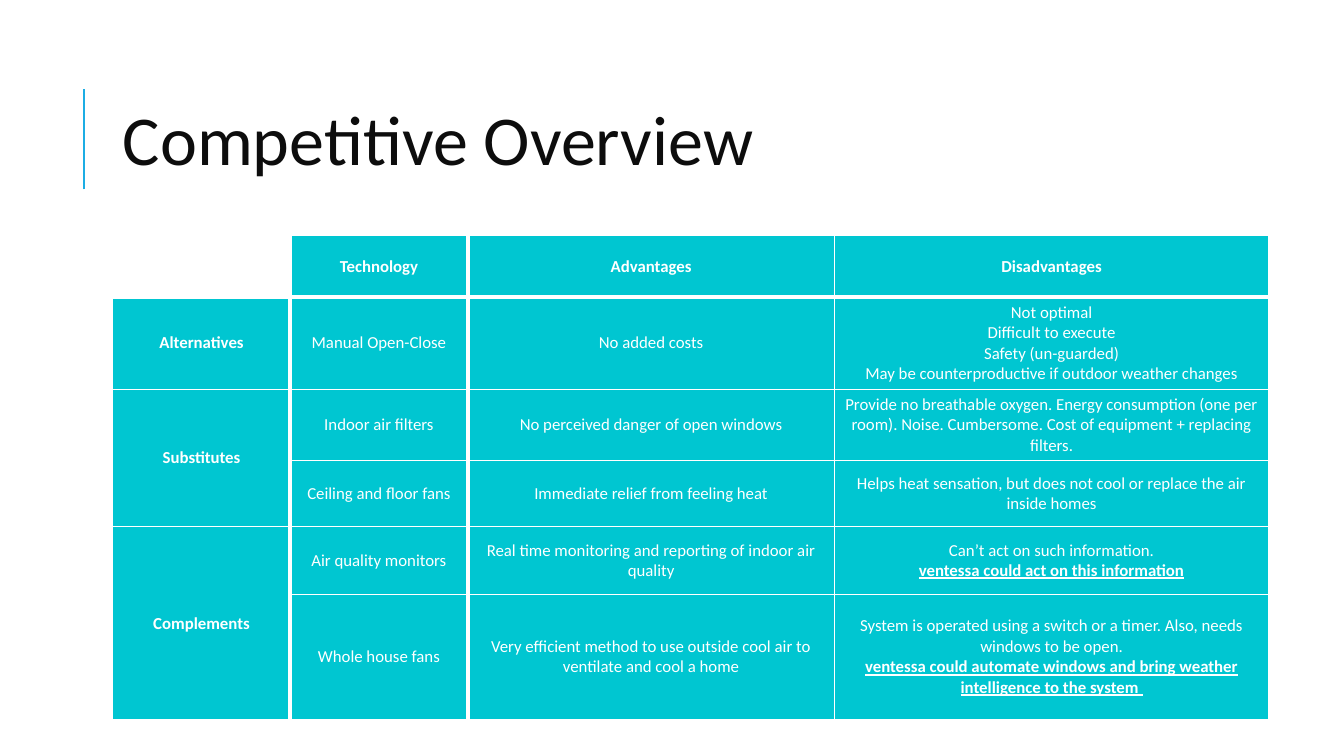
"""Build the competitive overview slide."""
from dataclasses import dataclass

from lxml import etree
from pptx import Presentation
from pptx.dml.color import RGBColor
from pptx.enum.shapes import MSO_CONNECTOR
from pptx.enum.text import MSO_ANCHOR, PP_ALIGN
from pptx.oxml.ns import qn
from pptx.util import Emu, Inches, Pt

STRAIGHT = MSO_CONNECTOR.STRAIGHT
MIDDLE = MSO_ANCHOR.MIDDLE
LEFT, CENTER = PP_ALIGN.LEFT, PP_ALIGN.CENTER

COLORS = {"cell": "00C6D1", "white": "FFFFFF", "title": "0D0D0D", "rule": "1CADE4"}
FONT = "Calibri"
W, H = Inches(13.33), Inches(7.5)
COL_SHARES = [13.2, 13.2, 27.3, 32.3]
ROW_SHARES = [8.1, 12.2, 9.4, 8.8, 8.9, 16.6]
HEADERS = ["", "Technology", "Advantages", "Disadvantages"]
THIN, THICK = 1, 3


@dataclass
class Option:
    """One technology with its group, pros, cons and closing remark."""
    group: str
    technology: str
    advantage: str
    drawbacks: list[str]
    remark: str = ""


OPTIONS = [
    Option("Alternatives", "Manual Open-Close", "No added costs",
           ["Not optimal", "Difficult to execute", "Safety (un-guarded)",
            "May be counterproductive if outdoor weather changes"]),
    Option("Substitutes", "Indoor air filters", "No perceived danger of open windows",
           ["Provide no breathable oxygen. Energy consumption (one per room). Noise. "
            "Cumbersome. Cost of equipment + replacing filters."]),
    Option("Substitutes", "Ceiling and floor fans", "Immediate relief from feeling heat",
           ["Helps heat sensation, but does not cool or replace the air inside homes"]),
    Option("Complements", "Air quality monitors",
           "Real time monitoring and reporting of indoor air quality",
           ["Can’t act on such information."],
           "ventessa could act on this information"),
    Option("Complements", "Whole house fans",
           "Very efficient method to use outside cool air to ventilate and cool a home",
           ["System is operated using a switch or a timer. Also, needs windows to be open."],
           "ventessa could automate windows and bring weather intelligence to the system "),
]


def x(share: float) -> Emu:
    """Convert a percentage of the slide width to a length."""
    return Emu(round(W * share / 100))


def y(share: float) -> Emu:
    """Convert a percentage of the slide height to a length."""
    return Emu(round(H * share / 100))


def rgb(name: str) -> RGBColor:
    """Look up a named colour."""
    return RGBColor.from_string(COLORS[name])


def add_text(tf, text: str, *, size: float = 12, color: str = "white", bold: bool = False,
             underline: bool = False, align=CENTER, spacing: float | None = None) -> None:
    """Fill the empty first paragraph, or append a new one, with formatted text."""
    p = tf.paragraphs[0] if not tf.text else tf.add_paragraph()
    p.alignment = align
    if spacing:
        p.line_spacing = spacing
    r = p.add_run()
    r.text = text
    r.font.name, r.font.size = FONT, Pt(size)
    r.font.bold, r.font.underline = bold, underline
    r.font.color.rgb = rgb(color)


def set_borders(cell, row: int, col: int) -> None:
    """Draw white cell borders, thick below the header and around the technology column."""
    widths = {
        "a:lnL": THICK if col in (1, 2) else THIN,
        "a:lnR": THICK if col in (0, 1) else THIN,
        "a:lnT": THICK if row == 1 else THIN,
        "a:lnB": THICK if row == 0 else THIN,
    }
    tc_pr = cell._tc.get_or_add_tcPr()
    for i, (tag, width) in enumerate(widths.items()):
        ln = etree.Element(qn(tag), w=str(Pt(width)))
        fill = etree.SubElement(ln, qn("a:solidFill"))
        etree.SubElement(fill, qn("a:srgbClr"), val=COLORS["white"])
        tc_pr.insert(i, ln)


def add_title(s) -> None:
    """Add the slide title and the vertical rule beside it."""
    rule = s.shapes.add_connector(STRAIGHT, x(6.23), y(25.07), x(6.23), y(11.73))
    rule.line.color.rgb, rule.line.width = rgb("rule"), Pt(1.5)
    etree.SubElement(rule._element.spPr, qn("a:effectLst"))
    tf = s.shapes.add_textbox(x(8.4), y(8.27), x(79.74), y(21.87)).text_frame
    tf.word_wrap, tf.vertical_anchor = True, MIDDLE
    add_text(tf, "Competitive Overview", size=50, color="title", align=LEFT, spacing=0.8)


def add_comparison(s) -> None:
    """Add the comparison table with one merged label per group."""
    table = s.shapes.add_table(len(ROW_SHARES), len(COL_SHARES), x(8.4), y(31.2),
                               x(sum(COL_SHARES)), y(sum(ROW_SHARES))).table
    table.first_row = table.horz_banding = False
    for column, share in zip(table.columns, COL_SHARES):
        column.width = x(share)
    for row, share in zip(table.rows, ROW_SHARES):
        row.height = y(share)
    for row in range(len(ROW_SHARES)):
        for col in range(len(COL_SHARES)):
            cell = table.cell(row, col)
            cell.vertical_anchor = MIDDLE
            if row == col == 0:
                cell.fill.background()
            else:
                cell.fill.solid()
                cell.fill.fore_color.rgb = rgb("cell")
            set_borders(cell, row, col)
    for col, header in enumerate(HEADERS[1:], 1):
        add_text(table.cell(0, col).text_frame, header, bold=True)

    groups = [option.group for option in OPTIONS]
    for group in dict.fromkeys(groups):
        first, count = groups.index(group) + 1, groups.count(group)
        cell = table.cell(first, 0)
        if count > 1:
            cell.merge(table.cell(first + count - 1, 0))
        add_text(cell.text_frame, group, bold=True)
    for row, option in enumerate(OPTIONS, 1):
        add_text(table.cell(row, 1).text_frame, option.technology)
        add_text(table.cell(row, 2).text_frame, option.advantage)
        tf = table.cell(row, 3).text_frame
        for drawback in option.drawbacks:
            add_text(tf, drawback)
        if option.remark:
            add_text(tf, option.remark, bold=True, underline=True)


def main() -> None:
    """Create and save the presentation."""
    prs = Presentation()
    prs.slide_width, prs.slide_height = W, H
    s = prs.slides.add_slide(prs.slide_layouts[6])
    add_title(s)
    add_comparison(s)
    prs.save("out.pptx")


if __name__ == "__main__":
    main()
